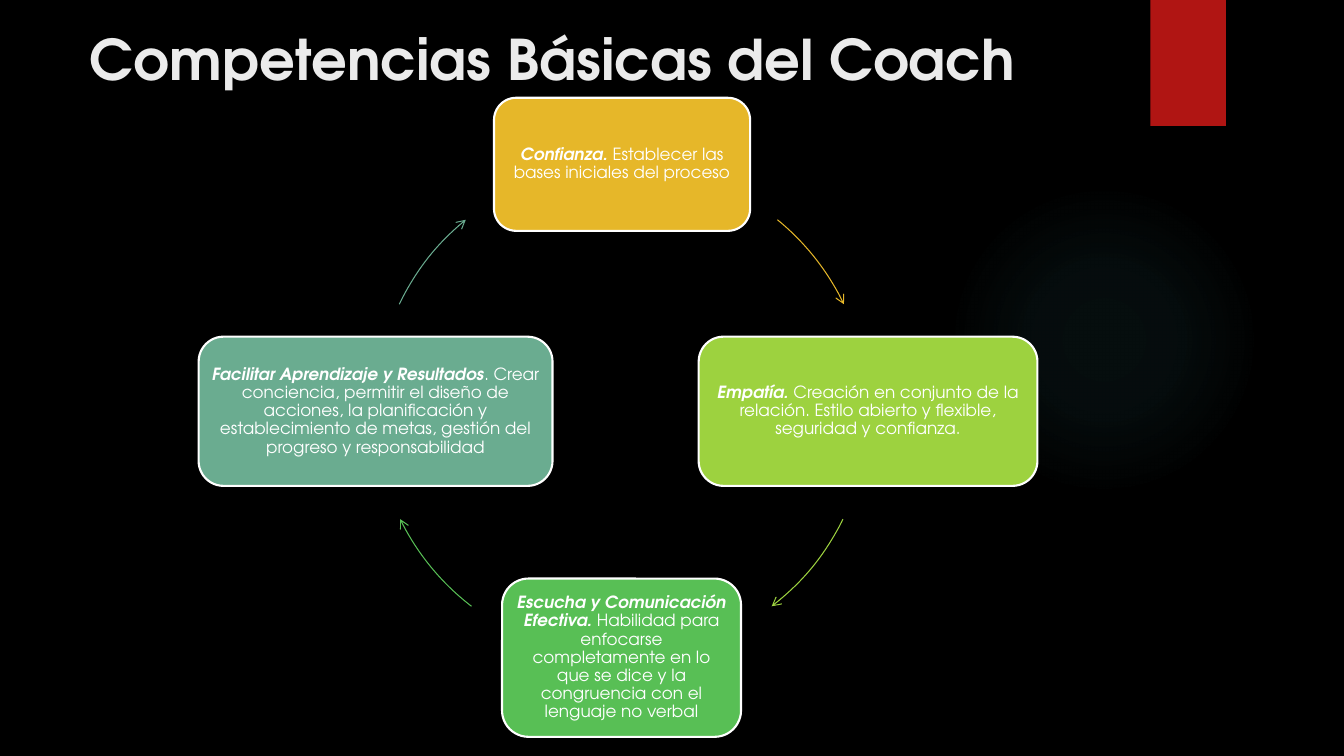
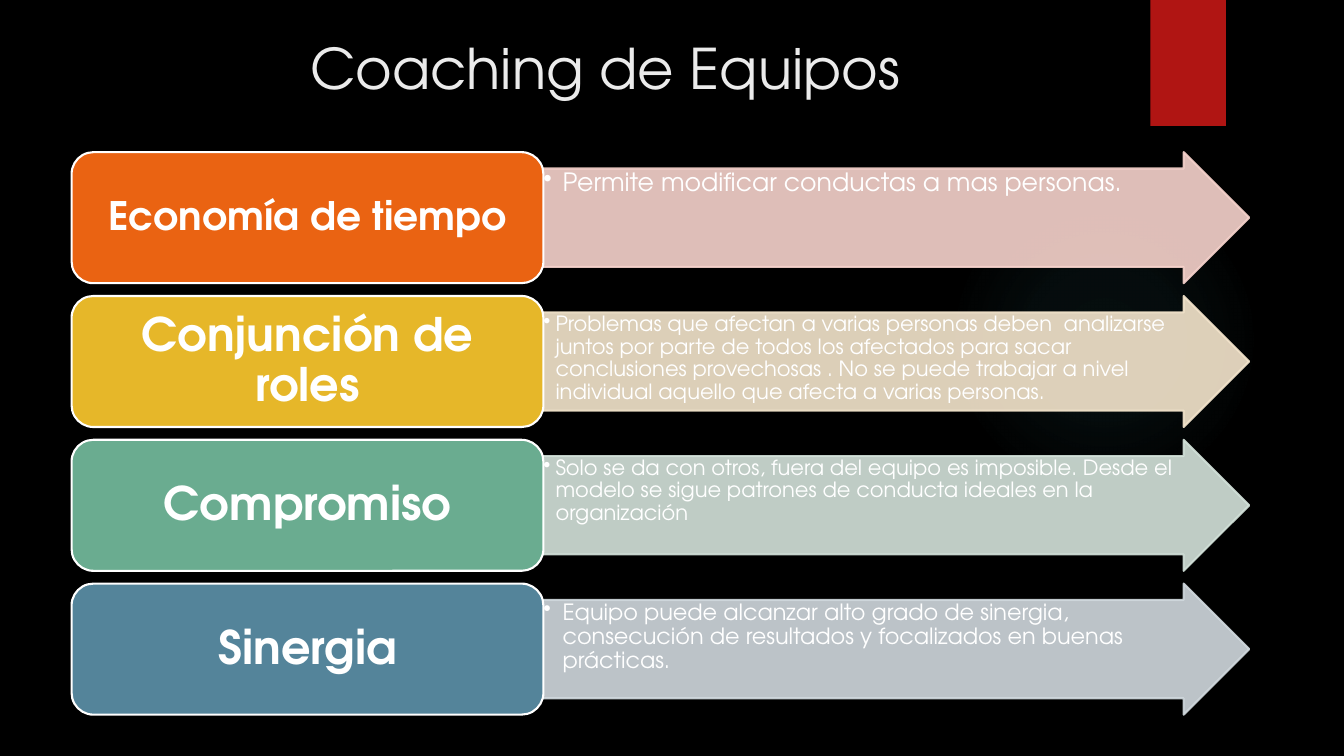
"""Builds two dark slides on coaching: a cycle of skills and a list of arrows."""
from lxml.etree import SubElement as Sub
from pptx import Presentation
from pptx.dml.color import RGBColor as Rgb
from pptx.enum.shapes import MSO_SHAPE as Kind
from pptx.enum.text import MSO_ANCHOR as Anchor, MSO_AUTO_SIZE as Fit, PP_ALIGN as Align
from pptx.oxml import parse_xml
from pptx.oxml.ns import nsdecls, qn
from pptx.util import Inches, Pt

FONT = "TeX Gyre Adventor"
HUES = {
    "back": "000000", "title": "EBEBEB", "text": "FFFFFF", "band": "B01513", "glow": "50B9C1",
    "gold": "E6B729", "lime": "9DD23F", "green": "58BF55", "teal": "6AAC90",
    "orange": "EA6312", "blue": "54849A",
    "rose": "F7D3CC", "sand": "F5E6CD", "mint": "D4E3DB", "mist": "D1D9DE",
}


class Deck:
    def __init__(self):
        self.show = Presentation()
        self.show.slide_width = Inches(13.33)
        self.show.slide_height = Inches(7.5)
        self.slide = None
        self.paint(self.show.slide_master.background.fill, "back")

    def paint(self, fill, hue):
        fill.solid()
        fill.fore_color.rgb = Rgb.from_string(HUES[hue])

    def ink(self, run, size, hue="text", bold=False, slant=False):
        font = run.font
        font.name, font.size = FONT, Pt(size)
        font.bold, font.italic = bold, slant
        font.color.rgb = Rgb.from_string(HUES[hue])

    def page(self, text, box, align, bold):
        self.slide = self.show.slides.add_slide(self.show.slide_layouts[5])
        self.glow()
        self.shape(Kind.RECTANGLE, (11.41, 0, 0.75, 1.25), "band")
        title = self.slide.shapes.title
        title.left, title.top, title.width, title.height = map(Inches, box)
        frame = title.text_frame
        frame.text = text
        frame.auto_size = Fit.NONE
        frame.vertical_anchor = Anchor.TOP
        para = frame.paragraphs[0]
        para.alignment = align
        self.ink(para.runs[0], 40, "title", bold)

    def shape(self, kind, box, hue=None, edge=None, width=1.5):
        item = self.slide.shapes.add_shape(kind, *map(Inches, box))
        item.shadow.inherit = False
        if hue:
            self.paint(item.fill, hue)
        else:
            item.fill.background()
        if edge:
            self.paint(item.line.fill, edge)
            item.line.width = Pt(width)
        else:
            item.line.fill.background()
        return item

    def glow(self):
        props = self.shape(Kind.OVAL, (9.41, 1.83, 3.08, 3.08)).element.spPr
        stops = "".join(
            f'<a:gs pos="{pos}000"><a:srgbClr val="{HUES["glow"]}">'
            f'<a:alpha val="{alpha}000"/></a:srgbClr></a:gs>'
            for pos, alpha in ((0, 7), (36, 6), (69, 0)))
        props.replace(props.find(qn("a:noFill")), parse_xml(
            f'<a:gradFill {nsdecls("a")}><a:gsLst>{stops}</a:gsLst><a:path path="circle">'
            '<a:fillToRect l="50000" t="50000" r="50000" b="50000"/></a:path></a:gradFill>'))

    def block(self, item, inset, anchor, align):
        frame = item.text_frame
        frame.word_wrap = True
        frame.vertical_anchor = anchor
        frame.margin_left = frame.margin_right = Inches(inset[0])
        frame.margin_top = frame.margin_bottom = Inches(inset[1])
        para = frame.paragraphs[0]
        para.alignment = align
        para.line_spacing = 0.9
        return para

    def card(self, box, hue, head, size, inset, rest="", slant=False):
        item = self.shape(Kind.ROUNDED_RECTANGLE, box, hue, "text")
        para = self.block(item, inset, Anchor.MIDDLE, Align.CENTER)
        para.text = head
        self.ink(para.runs[0], size, bold=True, slant=slant)
        if rest:
            run = para.add_run()
            run.text = rest
            self.ink(run, size)

    def arc(self, box, hue, start, end):
        item = self.shape(Kind.ARC, box, edge=hue, width=0.75)
        item.adjustments[0] = start * 0.6
        item.adjustments[1] = end * 0.6
        Sub(item.element.spPr.find(qn("a:ln")), qn("a:tailEnd"), type="arrow")

    def arrow(self, box, hue, text, size, indent):
        item = self.shape(Kind.RIGHT_ARROW, box, hue, hue)
        item.adjustments[0], item.adjustments[1] = 0.75, 0.5
        for tint in item.element.spPr.iter(qn("a:srgbClr")):
            Sub(tint, qn("a:alpha"), val="90000")
        para = self.block(item, (0.01, 0.01), Anchor.TOP, Align.LEFT)
        para.text = text
        props = para._p.get_or_add_pPr()
        props.set("marL", str(Inches(indent)))
        props.set("indent", str(-Inches(indent)))
        Sub(props, qn("a:buChar"), char="•")
        self.ink(para.runs[0], size)


def cycle(deck):
    deck.page("Competencias Básicas del Coach", (0.79, 0.19, 10.29, 1.53), Align.LEFT, True)
    ring = (3.72, 1.63, 4.89, 4.89)
    steps = (
        ((4.9, 0.97, 2.54, 1.32), "gold", "Confianza. ",
         "Establecer las bases iniciales del proceso", 309.2, 334.4),
        ((6.93, 3.34, 3.36, 1.48), "lime", "Empatía. ",
         "Creación en conjunto de la relación. Estilo abierto y flexible, seguridad y confianza.",
         26.1, 52.5),
        ((4.98, 5.74, 2.37, 1.57), "green", "Escucha y Comunicación Efectiva. ",
         "Habilidad para enfocarse completamente en lo que se dice y la congruencia "
         "con el lenguaje no verbal", 127.5, 153.9),
        ((1.97, 3.34, 3.51, 1.48), "teal", "Facilitar Aprendizaje y Resultados",
         ". Crear conciencia, permitir el diseño de acciones, la planificación y "
         "establecimiento de metas, gestión del progreso y responsabilidad", 205.6, 230.8),
    )
    for box, hue, head, rest, start, end in steps:
        deck.card(box, hue, head, 12, (0.05, 0.05), rest, True)
        deck.arc(ring, hue, start, end)


def team(deck):
    deck.page("Coaching de Equipos", (0.86, 0.28, 10.29, 1.01), Align.CENTER, False)
    rows = (
        ("Economía de tiempo", 28, "orange", "rose", 18, 0.19,
         "Permite modificar conductas a mas personas."),
        ("Conjunción de roles", 33, "gold", "sand", 15, 0.12,
         "Problemas que afectan a varias personas deben  analizarse juntos por parte de todos "
         "los afectados para sacar conclusiones provechosas . No se puede trabajar a nivel "
         "individual aquello que afecta a varias personas."),
        ("Compromiso", 33, "teal", "mint", 15, 0.12,
         "Solo se da con otros, fuera del equipo es imposible. Desde el modelo se sigue "
         "patrones de conducta ideales en la organización"),
        ("Sinergia", 33, "blue", "mist", 16, 0.19,
         "Equipo puede alcanzar alto grado de sinergia, consecución de resultados y "
         "focalizados en buenas prácticas."),
    )
    pitch = 4.28 / 3
    for row, (head, big, hue, pale, small, indent, text) in enumerate(rows):
        top = 1.51 + row * pitch
        deck.arrow((5.38, top, 7.01, 1.3), pale, text, small, indent)
        deck.card((0.71, top, 4.68, 1.3), hue, head, big, (0.14, 0.07))


def main():
    deck = Deck()
    cycle(deck)
    team(deck)
    deck.show.save("out.pptx")


if __name__ == "__main__":
    main()
